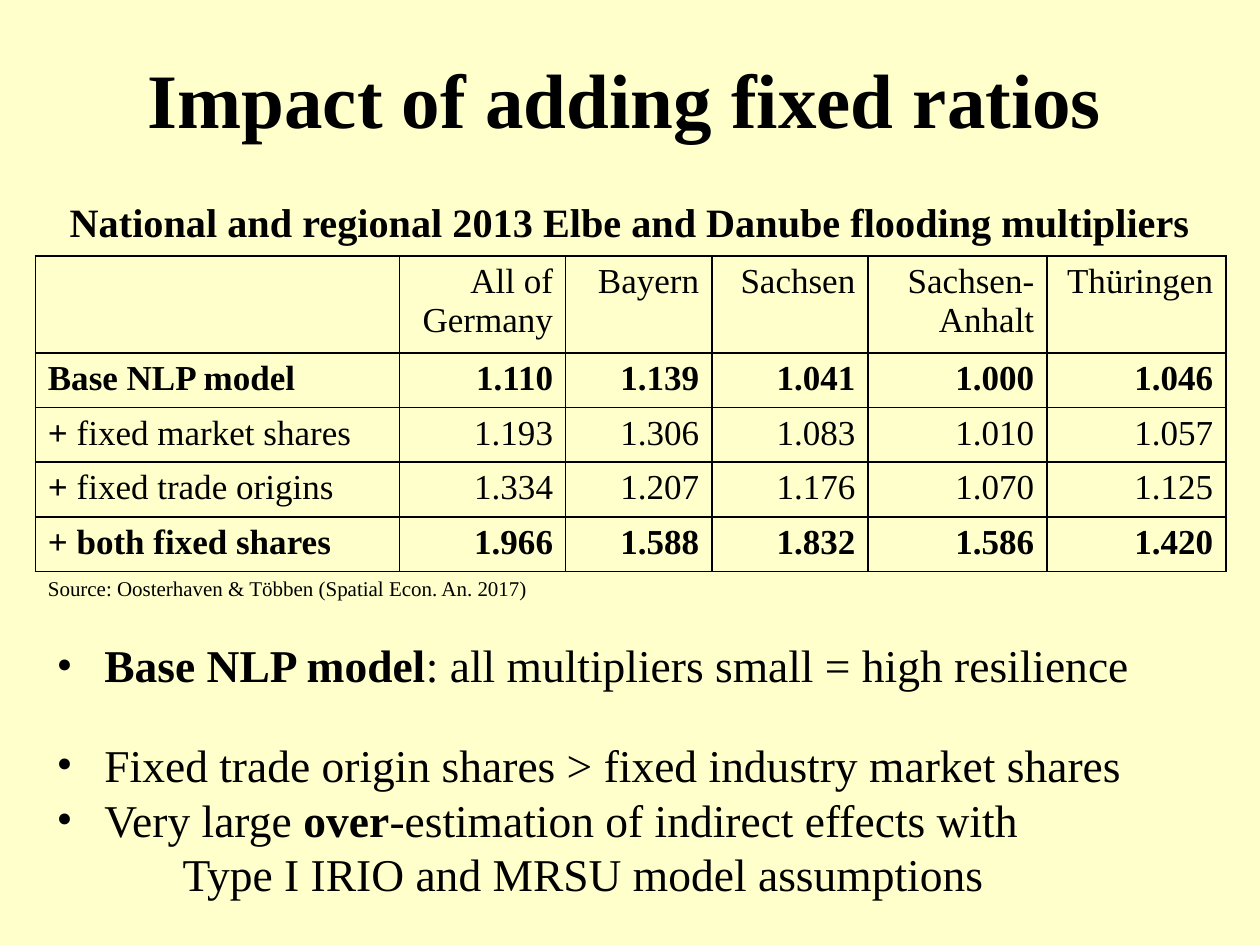
from lxml import etree
from pptx import Presentation
from pptx.dml.color import RGBColor
from pptx.enum.text import MSO_ANCHOR, PP_ALIGN
from pptx.oxml.ns import qn
from pptx.util import Inches, Pt

LEFT, CENTER, RIGHT = PP_ALIGN.LEFT, PP_ALIGN.CENTER, PP_ALIGN.RIGHT
COLORS = {"background": "FFFFCC", "ink": "000000"}
FONT = "Times New Roman"

# Rich text is a list of (text, bold) runs.
TITLE = [("Impact of adding fixed ratios", True)]
CAPTION = [("National and regional 2013 Elbe and Danube flooding multipliers", True)]
SOURCE = [("Source: Oosterhaven & Többen (Spatial Econ. An. 2017)", False)]
REGIONS = ["All of Germany", "Bayern", "Sachsen", "Sachsen-Anhalt", "Thüringen"]
MODELS = [
    ([("Base NLP model", True)], ["1.110", "1.139", "1.041", "1.000", "1.046"]),
    ([("+ ", True), ("fixed market shares", False)],
     ["1.193", "1.306", "1.083", "1.010", "1.057"]),
    ([("+ ", True), ("fixed trade origins", False)],
     ["1.334", "1.207", "1.176", "1.070", "1.125"]),
    ([("+ both fixed shares", True)], ["1.966", "1.588", "1.832", "1.586", "1.420"]),
]
COL_WIDTHS = [2.89, 1.32, 1.16, 1.24, 1.42, 1.42]
ROW_HEIGHTS = [0.45, 0.71] + [0.41] * 5
BULLET, CONTINUED = (0.38, -0.38, "•"), (1, 0, None)
FINDINGS = [  # box, then paragraphs with their indent style
    ((0.35, 5.01, 9.21, 0.54), [
        (BULLET, [("Base NLP model", True),
                  (": all multipliers small = high resilience", False)]),
    ]),
    ((0.35, 5.8, 9.19, 1.41), [
        (BULLET, [("Fixed trade origin shares > fixed industry market shares", False)]),
        (BULLET, [("Very large", False), (" over", True),
                  ("-estimation of indirect effects with", False)]),
        (CONTINUED, [("Type I IRIO and MRSU model assumptions", False)]),
    ]),
]


def write(p, runs, size, align=LEFT, indent=None):
    p.alignment = align
    for text, bold in runs:
        r = p.add_run()
        r.text = text
        r.font.name, r.font.size, r.font.bold = FONT, Pt(size), bold
        r.font.color.rgb = RGBColor.from_string(COLORS["ink"])
    if indent:
        margin, first, bullet = indent
        pPr = p._p.get_or_add_pPr()
        pPr.set("marL", str(Inches(margin)))
        pPr.set("indent", str(Inches(first)))
        if bullet:
            etree.SubElement(pPr, qn("a:buFont"), typeface=FONT)
            etree.SubElement(pPr, qn("a:buChar"), char=bullet)


def add_box(slide, box, paragraphs, size, align=LEFT, anchor=MSO_ANCHOR.TOP):
    tf = slide.shapes.add_textbox(*map(Inches, box)).text_frame
    tf.word_wrap = True
    tf.vertical_anchor = anchor
    for i, (indent, runs) in enumerate(paragraphs):
        p = tf.add_paragraph() if i else tf.paragraphs[0]
        write(p, runs, size, align, indent)


def set_borders(cell, visible):
    """Draw the sides named in visible (from L, R, T, B) and hide the others."""
    tcPr = cell._tc.get_or_add_tcPr()
    for i, side in enumerate("LRTB"):
        ln = etree.Element(qn("a:ln" + side), w=str(Pt(1)))
        if side in visible:
            fill = etree.SubElement(ln, qn("a:solidFill"))
            etree.SubElement(fill, qn("a:srgbClr"), val=COLORS["ink"])
        else:
            etree.SubElement(ln, qn("a:noFill"))
        tcPr.insert(i, ln)


def add_multiplier_table(slide):
    rows, cols = len(ROW_HEIGHTS), len(COL_WIDTHS)
    last = rows - 1
    table = slide.shapes.add_table(
        rows, cols, Inches(0.28), Inches(1.55),
        Inches(sum(COL_WIDTHS)), Inches(sum(ROW_HEIGHTS))).table
    table.first_row = table.horz_banding = False
    for column, width in zip(table.columns, COL_WIDTHS):
        column.width = Inches(width)
    for row, height in zip(table.rows, ROW_HEIGHTS):
        row.height = Inches(height)

    for r in range(rows):
        for c in range(cols):
            cell = table.cell(r, c)
            cell.fill.background()
            set_borders(cell, {0: "B", last: "T"}.get(r, "LRTB"))
    for r, runs, size, align in ((0, CAPTION, 23, CENTER), (last, SOURCE, 12, LEFT)):
        table.cell(r, 0).merge(table.cell(r, cols - 1))
        write(table.cell(r, 0).text_frame.paragraphs[0], runs, size, align)

    body = [([("", False)], REGIONS)] + MODELS
    for r, (label, values) in enumerate(body, start=1):
        bold = all(is_bold for _, is_bold in label)
        cells = [label] + [[(value, bold)] for value in values]
        for c, runs in enumerate(cells):
            write(table.cell(r, c).text_frame.paragraphs[0], runs, 20,
                  RIGHT if c else LEFT)


def main():
    prs = Presentation()
    prs.slide_width, prs.slide_height = Inches(10), Inches(7.5)
    slide = prs.slides.add_slide(prs.slide_layouts[6])
    slide.background.fill.solid()
    slide.background.fill.fore_color.rgb = RGBColor.from_string(COLORS["background"])

    add_box(slide, (0.71, 0.15, 8.5, 1.25), [(None, TITLE)], 44, CENTER,
            MSO_ANCHOR.MIDDLE)
    add_multiplier_table(slide)
    for box, paragraphs in FINDINGS:
        add_box(slide, box, paragraphs, 26)
    prs.save("out.pptx")


if __name__ == "__main__":
    main()
